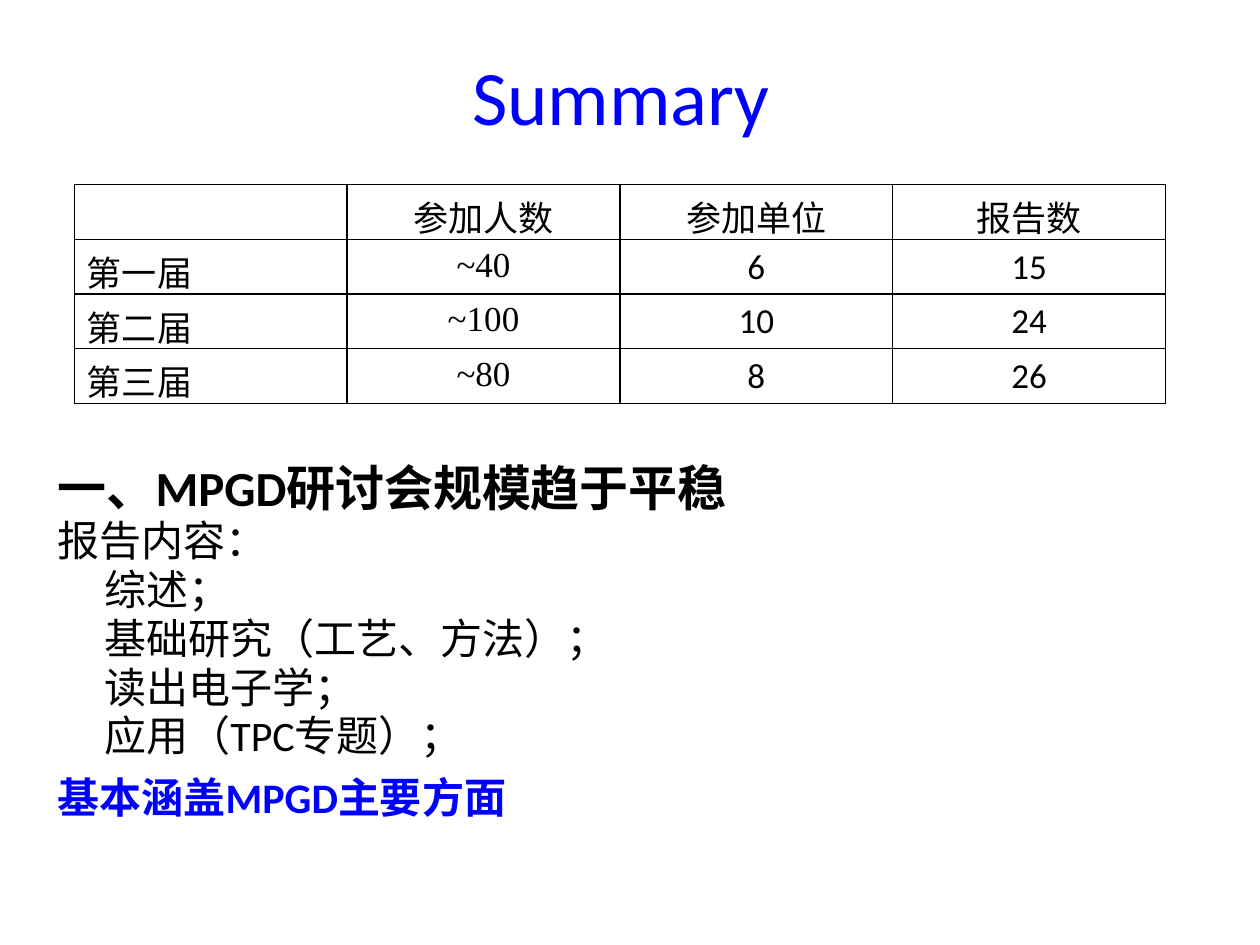
from dataclasses import dataclass

from lxml.etree import SubElement
from pptx import Presentation
from pptx.dml.color import RGBColor
from pptx.enum.text import MSO_ANCHOR as Anchor, PP_ALIGN as Align
from pptx.oxml.ns import qn
from pptx.util import Inches, Pt


@dataclass(frozen=True)
class Theme:
    ink: str = "000000"
    accent: str = "0000FF"
    font: str = "Calibri"
    estimate_font: str = "Times New Roman"
    title: int = 44
    heading: int = 28
    body: int = 24
    cell: int = 20
    border: float = 1


THEME = Theme()
WIDTH, HEIGHT = Inches(10), Inches(7.5)

TITLE_BOX = (0.043, 0.049, 0.9, 0.103)
TABLE_BOX = (0.059, 0.1955, 0.866, 0.23)
BODY_BOX = (0.036, 0.49, 0.917, 0.441)

ATTENDANCE = [
    ("", "参加人数", "参加单位", "报告数"),
    ("第一届", "~40", "6", "15"),
    ("第二届", "~100", "10", "24"),
    ("第三届", "~80", "8", "26"),
]
TOPICS = ["综述；", "基础研究（工艺、方法）；", "读出电子学；", "应用（TPC专题）；"]


def on_slide(box):
    """Turn shares of the slide's size into lengths."""
    left, top, width, height = box
    return (int(left * WIDTH), int(top * HEIGHT),
            int(width * WIDTH), int(height * HEIGHT))


def write(paragraph, text, *, size, color=THEME.ink, font=THEME.font, bold=False,
          align=Align.LEFT, spacing=1.0, before=0, indent=0):
    paragraph.alignment = align
    paragraph.line_spacing = spacing
    paragraph.space_before = Pt(before)
    if indent:
        paragraph._p.get_or_add_pPr().set("marL", str(Inches(indent)))
    run = paragraph.add_run()
    run.text = text
    run.font.size = Pt(size)
    run.font.name = font
    run.font.bold = bold
    run.font.color.rgb = RGBColor.from_string(color)


def add_frame(slide, box, anchor):
    frame = slide.shapes.add_textbox(*on_slide(box)).text_frame
    frame.word_wrap = True
    frame.vertical_anchor = anchor
    return frame


def add_title(slide, box):
    frame = add_frame(slide, box, Anchor.MIDDLE)
    write(frame.paragraphs[0], "Summary", size=THEME.title, color=THEME.accent,
          align=Align.CENTER)


def outline(cell):
    """Clear the cell's fill and rule all four of its sides."""
    properties = cell._tc.get_or_add_tcPr()
    for side in ("a:lnL", "a:lnR", "a:lnT", "a:lnB"):
        line = SubElement(properties, qn(side), w=str(Pt(THEME.border)))
        fill = SubElement(line, qn("a:solidFill"))
        SubElement(fill, qn("a:srgbClr"), val=THEME.ink)
    cell.fill.background()


def add_attendance(slide, box):
    rows, columns = len(ATTENDANCE), len(ATTENDANCE[0])
    table = slide.shapes.add_table(rows, columns, *on_slide(box)).table
    table.first_row = table.horz_banding = False
    for r, record in enumerate(ATTENDANCE):
        for c, value in enumerate(record):
            cell = table.cell(r, c)
            outline(cell)
            if value:
                write(cell.text_frame.paragraphs[0], value, size=THEME.cell,
                      font=THEME.estimate_font if value.startswith("~") else THEME.font,
                      align=Align.CENTER if c else Align.LEFT)


def add_conclusions(slide, box):
    frame = add_frame(slide, box, Anchor.TOP)
    tight = {"spacing": 0.8}
    item = {"size": THEME.body, "before": 0.2 * THEME.body, **tight}
    write(frame.paragraphs[0], "一、MPGD研讨会规模趋于平稳", size=THEME.heading,
          bold=True, **tight)
    write(frame.add_paragraph(), "报告内容：", **item)
    for topic in TOPICS:
        write(frame.add_paragraph(), topic, indent=0.37, **item)
    write(frame.add_paragraph(), "基本涵盖MPGD主要方面", size=THEME.body,
          color=THEME.accent, bold=True, before=12, **tight)


def main():
    deck = Presentation()
    deck.slide_width, deck.slide_height = WIDTH, HEIGHT
    slide = deck.slides.add_slide(deck.slide_layouts[6])
    add_title(slide, TITLE_BOX)
    add_conclusions(slide, BODY_BOX)
    add_attendance(slide, TABLE_BOX)
    deck.save("out.pptx")


if __name__ == "__main__":
    main()
